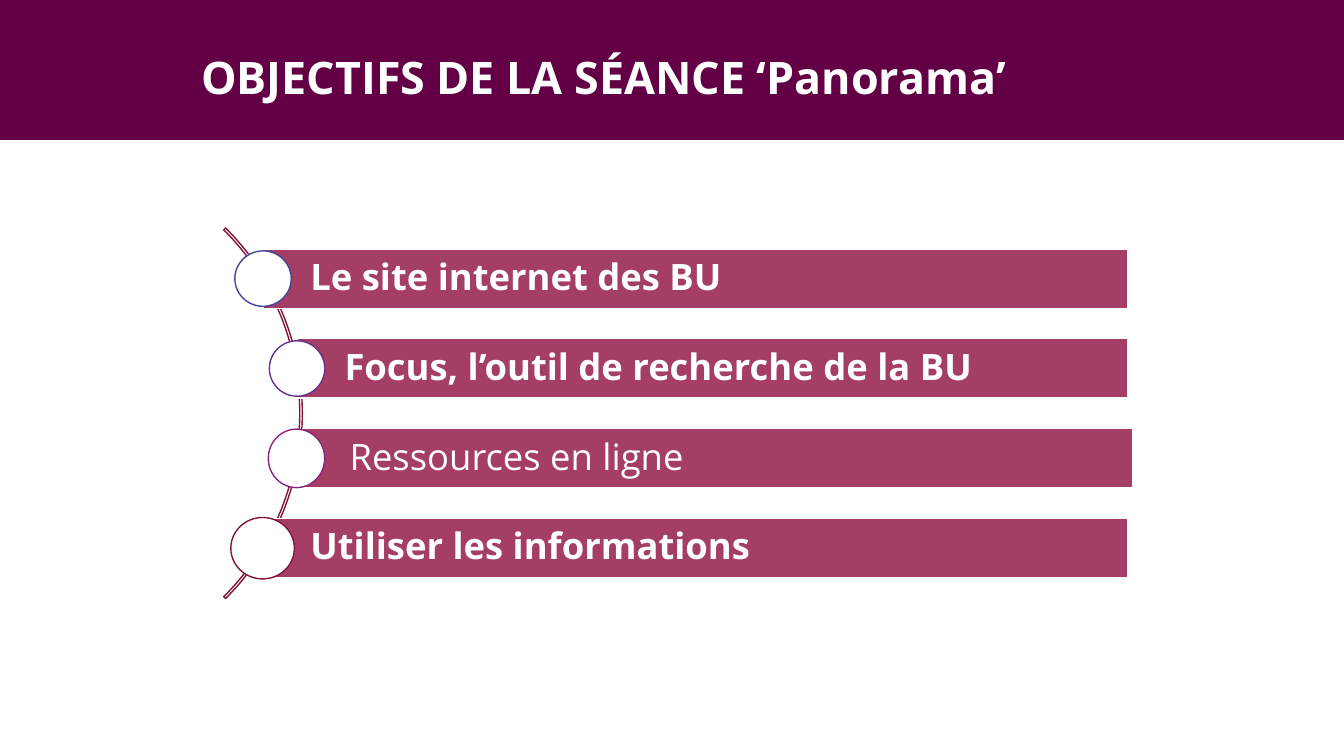
from pptx import Presentation
from pptx.dml.color import RGBColor
from pptx.enum.shapes import MSO_SHAPE
from pptx.enum.text import MSO_ANCHOR, MSO_AUTO_SIZE, PP_ALIGN
from pptx.util import Pt

RECTANGLE, OVAL, BLOCK_ARC = MSO_SHAPE.RECTANGLE, MSO_SHAPE.OVAL, MSO_SHAPE.BLOCK_ARC
TOP, MIDDLE = MSO_ANCHOR.TOP, MSO_ANCHOR.MIDDLE
LEFT, CENTER = PP_ALIGN.LEFT, PP_ALIGN.CENTER
NO_FIT = MSO_AUTO_SIZE.NONE
TITLE_ONLY = 5

COLORS = {
    "white": "FFFFFF",
    "banner": "630045",
    "bar": "A43E65",
    "blue": "464595",
    "violet": "663291",
    "purple": "8A2280",
    "crimson": "80143C",
}

FIRST_BAR_TOP, BAR_PITCH, BAR_HEIGHT = 177.8, 64.2, 42.4

# text, bold, bar left, bar right, marker centre, marker width, marker height, marker colour
OBJECTIVES = [
    ("Le site internet des BU", True, 188, 805.7, 187.9, 40.3, 39.6, "blue"),
    ("Focus, l’outil de recherche de la BU", True, 212.4, 805.7, 212.2, 39.6, 39.6, "violet"),
    ("Ressources en ligne", False, 216, 809.3, 211.8, 40.3, 41.8, "purple"),
    ("Utiliser les informations", True, 188, 805.7, 187.6, 45.4, 43.9, "crimson"),
]


def rgb(name):
    return RGBColor.from_string(COLORS[name])


class ObjectivesPage:
    font_name = "Open Sans"

    def __init__(self, deck):
        self.page = deck.slides.add_slide(deck.slide_layouts[TITLE_ONLY])

    def shape(self, kind, left, top, width, height, fill=None, line=None):
        shape = self.page.shapes.add_shape(kind, Pt(left), Pt(top), Pt(width), Pt(height))
        shape.shadow.inherit = False
        if fill:
            shape.fill.solid()
            shape.fill.fore_color.rgb = rgb(fill)
        else:
            shape.fill.background()
        if line:
            shape.line.color.rgb = rgb(line)
            shape.line.width = Pt(1)
        else:
            shape.line.fill.background()
        return shape

    def label(self, box, text, size, bold, anchor, align):
        """Put one styled paragraph in the box and return its text frame."""
        frame = box.text_frame
        frame.text = text
        frame.word_wrap = True
        frame.auto_size = NO_FIT
        frame.vertical_anchor = anchor
        para = frame.paragraphs[0]
        para.alignment = align
        font = para.runs[0].font
        font.name, font.size, font.bold = self.font_name, Pt(size), bold
        font.color.rgb = rgb("white")
        return frame

    def banner(self, width, height):
        """Draw the band at the top, behind the title."""
        band = self.shape(RECTANGLE, 0, 0, width, height, fill="banner")
        self.page.shapes.element.insert(2, band.element)

    def title(self, text, left, top, width, height):
        box = self.page.shapes.title
        box.left, box.top, box.width, box.height = Pt(left), Pt(top), Pt(width), Pt(height)
        self.label(box, text, 32, True, TOP, CENTER)

    def arc(self, left, top, diameter):
        arc = self.shape(BLOCK_ARC, left, top, diameter, diameter, line="crimson")
        for index, value in enumerate((189, 27, 0.005)):
            arc.adjustments[index] = value

    def bar(self, text, bold, left, top, right):
        bar = self.shape(RECTANGLE, left, top, right - left, BAR_HEIGHT, "bar", "white")
        frame = self.label(bar, text, 26, bold, MIDDLE, LEFT)
        frame.margin_left = Pt(33.7)
        frame.margin_top = frame.margin_right = frame.margin_bottom = Pt(5.2)
        frame.paragraphs[0].line_spacing = 0.9

    def marker(self, center_x, center_y, width, height, color):
        self.shape(OVAL, center_x - width / 2, center_y - height / 2, width, height, "white", color)


def main():
    deck = Presentation()
    deck.slide_width, deck.slide_height = Pt(960), Pt(540)
    page = ObjectivesPage(deck)
    page.banner(960, 100)
    page.title("OBJECTIFS DE LA SÉANCE ‘Panorama’ ", 111.6, 31.7, 648, 90)
    page.arc(-158.4, 108, 374.4)
    for row, (text, bold, left, right, center, width, height, color) in enumerate(OBJECTIVES):
        top = FIRST_BAR_TOP + row * BAR_PITCH
        page.bar(text, bold, left, top, right)
        page.marker(center, top + BAR_HEIGHT / 2, width, height, color)
    deck.save("out.pptx")


if __name__ == "__main__":
    main()
